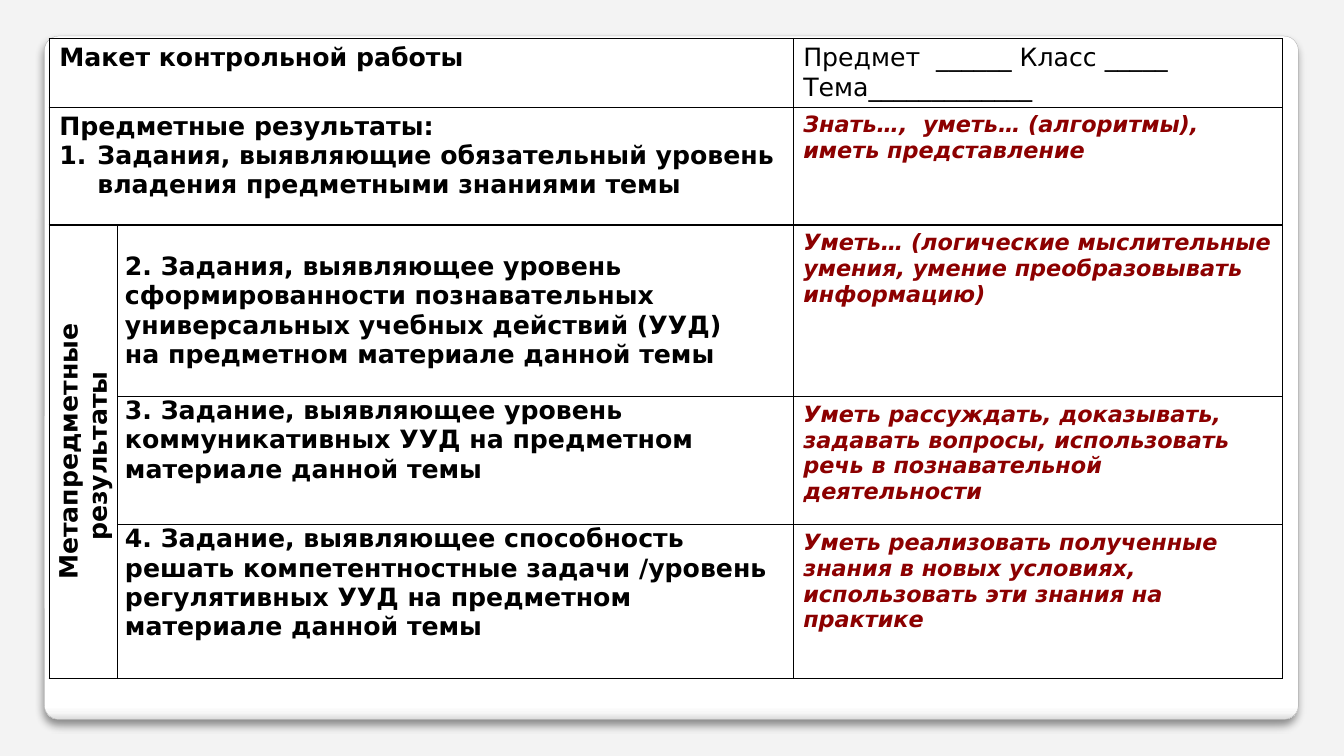
"""Build a slide with the layout of a school test as a table."""
from lxml.etree import SubElement
from pptx import Presentation
from pptx.dml.color import RGBColor
from pptx.enum.shapes import MSO_SHAPE as Shape
from pptx.enum.text import MSO_ANCHOR as Anchor, PP_ALIGN as Align
from pptx.oxml import parse_xml
from pptx.oxml.ns import nsdecls, qn
from pptx.util import Cm, Pt

FONT = "DejaVu Sans"
COLORS = {"page": "F3F3F3", "white": "FFFFFF", "ink": "000000",
          "goal": "8C0000", "edge": "A4A4A4"}
PANEL_STOPS = [(0, "FFFFFF"), (98, "FFFFFF"), (99, "F7F7F7"), (100, "DADADA")]
PANEL_BOX = (1.12, 0.91, 31.6, 17.22)
TABLE_BOX = (1.24, 0.97, 31.09, 16.18)
COLUMNS = [1.73, 17.02, 12.34]
ROWS = [1.37, 2.97, 4.32, 3.23, 3.81]
MERGES = [((0, 0), (0, 1)), ((1, 0), (1, 1)), ((2, 0), (4, 0))]

HEADINGS = {
    (0, 0): "Макет контрольной работы",
    (1, 0): "Предметные результаты:\nЗадания, выявляющие обязательный уровень "
            "владения предметными знаниями темы",
    (2, 0): "Метапредметные результаты ",
}
FORM = {(0, 2): "Предмет  ______ Класс _____\nТема_____________"}
TASKS = {
    (2, 1): "2. Задания, выявляющее уровень сформированности познавательных "
            "универсальных учебных действий (УУД) \vна предметном материале данной темы",
    (3, 1): "3. Задание, выявляющее уровень коммуникативных УУД "
            "на предметном материале данной темы",
    (4, 1): "4. Задание, выявляющее способность решать компетентностные задачи "
            "/уровень регулятивных УУД на предметном материале данной темы",
}
GOALS = {
    (1, 2): "Знать…,  уметь… (алгоритмы), иметь представление",
    (2, 2): "Уметь… (логические мыслительные умения, умение преобразовывать информацию)",
    (3, 2): "Уметь рассуждать, доказывать, задавать вопросы, "
            "использовать речь в познавательной деятельности",
    (4, 2): "Уметь реализовать полученные знания в новых условиях, "
            "использовать эти знания на практике",
}


def color(name):
    return RGBColor.from_string(COLORS[name])


def add_panel(page):
    panel = page.shapes.add_shape(Shape.ROUNDED_RECTANGLE, *map(Cm, PANEL_BOX))
    panel.adjustments[0] = 0.021
    panel.fill.gradient()
    panel.fill.gradient_angle = 270
    panel.line.color.rgb = color("edge")
    panel.line.width = Pt(0.16)
    panel.shadow.inherit = False
    properties = panel._element.spPr
    stops = properties.find(".//" + qn("a:gsLst"))
    stops.clear()
    for percent, shade in PANEL_STOPS:
        stop = SubElement(stops, qn("a:gs"), pos=str(percent * 1000))
        SubElement(stop, qn("a:srgbClr"), val=shade)
    properties.find(qn("a:effectLst")).append(parse_xml(
        f'<a:outerShdw {nsdecls("a")} blurRad="{Pt(6)}" dist="{Pt(4)}" dir="5400000" '
        f'algn="t" rotWithShape="0"><a:srgbClr val="{COLORS["ink"]}">'
        '<a:alpha val="44000"/></a:srgbClr></a:outerShdw>'))


def frame_cell(cell):
    cell.fill.solid()
    cell.fill.fore_color.rgb = color("white")
    properties = cell._tc.get_or_add_tcPr()
    for index, side in enumerate("LRTB"):
        properties.insert(index, parse_xml(
            f'<a:ln{side} {nsdecls("a")} w="{Pt(1)}"><a:solidFill>'
            f'<a:srgbClr val="{COLORS["ink"]}"/></a:solidFill></a:ln{side}>'))


def write_cells(table, texts, size=18, shade="ink", bold=True, italic=False):
    for place, text in texts.items():
        frame = table.cell(*place).text_frame
        frame.text = text
        for para in frame.paragraphs:
            for span in para.runs:
                font = span.font
                font.name, font.size = FONT, Pt(size)
                font.bold, font.italic = bold, italic
                font.color.rgb = color(shade)


def number_paragraph(para):
    properties = para._p.get_or_add_pPr()
    indent = Cm(0.96)
    properties.set("marL", str(indent))
    properties.set("indent", str(-indent))
    SubElement(properties, qn("a:buAutoNum"), type="arabicPeriod")


def add_plan(page):
    holder = page.shapes.add_table(len(ROWS), len(COLUMNS), *map(Cm, TABLE_BOX))
    table = holder.table
    table.first_row = table.horz_banding = False
    for column, width in zip(table.columns, COLUMNS):
        column.width = Cm(width)
    for row, height in zip(table.rows, ROWS):
        row.height = Cm(height)
    holder.height = Cm(TABLE_BOX[3])
    for cell in table.iter_cells():
        frame_cell(cell)
    for first, last in MERGES:
        table.cell(*first).merge(table.cell(*last))

    write_cells(table, HEADINGS)
    write_cells(table, FORM, bold=False)
    write_cells(table, TASKS)
    write_cells(table, GOALS, size=16, shade="goal", italic=True)

    number_paragraph(table.cell(1, 0).text_frame.paragraphs[1])
    side = table.cell(2, 0)
    side._tc.get_or_add_tcPr().set("vert", "vert270")
    side.text_frame.paragraphs[0].alignment = Align.CENTER
    for place in TASKS:
        cell = table.cell(*place)
        cell.margin_left = cell.margin_right = Cm(0.18)
        cell.margin_top = cell.margin_bottom = 0
        para = cell.text_frame.paragraphs[0]
        para.space_before = para.space_after = Pt(6)
    table.cell(2, 1).vertical_anchor = Anchor.MIDDLE


def main():
    deck = Presentation()
    deck.slide_width, deck.slide_height = Cm(33.87), Cm(19.05)
    page = deck.slides.add_slide(deck.slide_layouts[6])
    page.background.fill.solid()
    page.background.fill.fore_color.rgb = color("page")
    add_panel(page)
    add_plan(page)
    deck.save("out.pptx")


if __name__ == "__main__":
    main()
